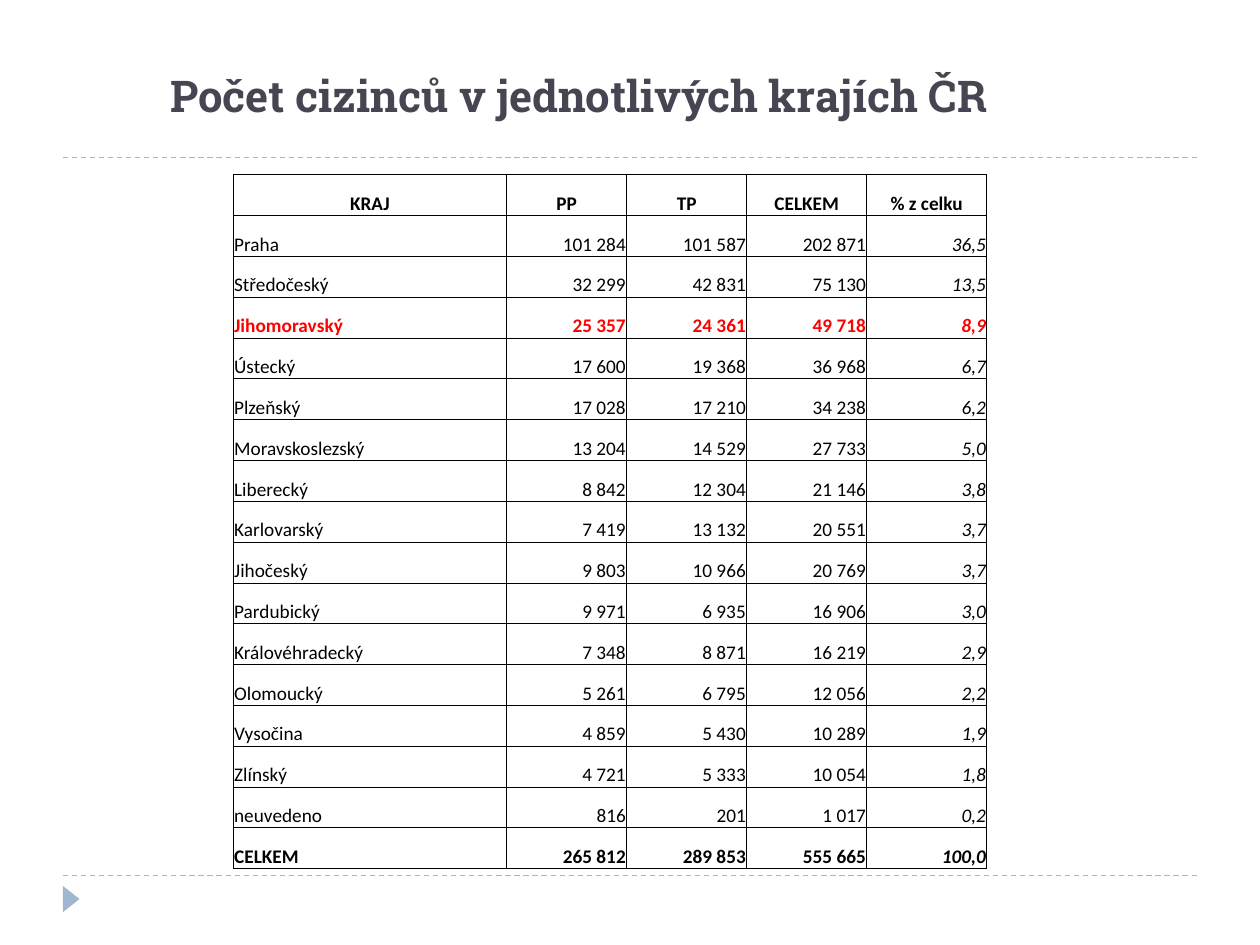
from dataclasses import dataclass

from pptx import Presentation
from pptx.dml.color import RGBColor as RGB
from pptx.enum.dml import MSO_LINE as Dash
from pptx.enum.shapes import MSO_CONNECTOR as Connector, MSO_SHAPE as Shape
from pptx.enum.text import MSO_ANCHOR as Anchor, PP_ALIGN as Align
from pptx.oxml.ns import qn
from pptx.util import Pt
from lxml.etree import SubElement


@dataclass(frozen=True)
class Theme:
    title_font: str = "Roboto Slab"
    body_font: str = "Calibri"
    title_size: float = 25
    body_size: float = 11
    title: str = "464653"
    ink: str = "000000"
    highlight: str = "FF0000"
    accent: str = "9FB8CD"
    border: float = 0.5
    rule: float = 0.75


THEME = Theme()
TITLE = "Počet cizinců v jednotlivých krajích ČR"
HEADINGS = ("KRAJ", "PP", "TP", "CELKEM", "% z celku")
REGIONS = (
    ("Praha", "101 284", "101 587", "202 871", "36,5"),
    ("Středočeský", "32 299", "42 831", "75 130", "13,5"),
    ("Jihomoravský", "25 357", "24 361", "49 718", "8,9"),
    ("Ústecký", "17 600", "19 368", "36 968", "6,7"),
    ("Plzeňský", "17 028", "17 210", "34 238", "6,2"),
    ("Moravskoslezský", "13 204", "14 529", "27 733", "5,0"),
    ("Liberecký", "8 842", "12 304", "21 146", "3,8"),
    ("Karlovarský", "7 419", "13 132", "20 551", "3,7"),
    ("Jihočeský", "9 803", "10 966", "20 769", "3,7"),
    ("Pardubický", "9 971", "6 935", "16 906", "3,0"),
    ("Královéhradecký", "7 348", "8 871", "16 219", "2,9"),
    ("Olomoucký", "5 261", "6 795", "12 056", "2,2"),
    ("Vysočina", "4 859", "5 430", "10 289", "1,9"),
    ("Zlínský", "4 721", "5 333", "10 054", "1,8"),
    ("neuvedeno", "816", "201", "1 017", "0,2"),
)
TOTAL = ("CELKEM", "265 812", "289 853", "555 665", "100,0")
HIGHLIGHTED = "Jihomoravský"


def write(frame, text, *, font=THEME.body_font, size=THEME.body_size,
          color=THEME.ink, bold=False, italic=False, align=Align.LEFT):
    paragraph = frame.paragraphs[0]
    paragraph.alignment = align
    run = paragraph.add_run()
    run.text = text
    run.font.name = font
    run.font.size = Pt(size)
    run.font.bold = bold
    run.font.italic = italic
    run.font.color.rgb = RGB.from_string(color)


def add_title(slide, left, top, width, height):
    title = slide.shapes.title
    title.left, title.top = Pt(left), Pt(top)
    title.width, title.height = Pt(width), Pt(height)
    title.text_frame.vertical_anchor = Anchor.MIDDLE
    title.text_frame.word_wrap = True
    write(title.text_frame, TITLE, font=THEME.title_font, size=THEME.title_size,
          color=THEME.title, bold=True, align=Align.CENTER)


def add_rule(slide, left, top, width):
    """Draw a dashed horizontal line."""
    rule = slide.shapes.add_connector(
        Connector.STRAIGHT, Pt(left), Pt(top), Pt(left + width), Pt(top))
    rule.line.color.rgb = RGB.from_string(THEME.accent)
    rule.line.width = Pt(THEME.rule)
    rule.line.dash_style = Dash.DASH
    SubElement(rule.element.spPr, qn("a:effectLst"))


def add_page_marker(slide, left, top, width, height):
    marker = slide.shapes.add_shape(
        Shape.ISOSCELES_TRIANGLE, Pt(left), Pt(top), Pt(width), Pt(height))
    marker.rotation = 90
    marker.shadow.inherit = False
    marker.fill.solid()
    marker.fill.fore_color.rgb = RGB.from_string(THEME.accent)
    marker.line.fill.background()


def format_cell(cell):
    """Give the cell thin borders, tight margins and no fill."""
    cell.margin_left = cell.margin_right = cell.margin_top = Pt(0.5)
    cell.margin_bottom = 0
    cell.vertical_anchor = Anchor.BOTTOM
    properties = cell._tc.get_or_add_tcPr()
    for side in ("a:lnL", "a:lnR", "a:lnT", "a:lnB"):
        border = SubElement(properties, qn(side), w=str(Pt(THEME.border)))
        SubElement(SubElement(border, qn("a:solidFill")), qn("a:srgbClr"), val=THEME.ink)
    cell.fill.background()


def add_region_table(slide, left, top, width, height):
    rows = (HEADINGS, *REGIONS, TOTAL)
    table = slide.shapes.add_table(
        len(rows), len(HEADINGS), Pt(left), Pt(top), Pt(width), Pt(height)).table
    table.first_row = table.horz_banding = False

    number_width = 68.6
    name_width = width - number_width * (len(HEADINGS) - 1)
    for index, column in enumerate(table.columns):
        column.width = Pt(number_width if index else name_width)

    for row, values in zip(table.rows, rows):
        row.height = Pt(height / len(rows))
        heading = values is HEADINGS
        highlighted = values[0] == HIGHLIGHTED
        for index, (cell, value) in enumerate(zip(row.cells, values)):
            format_cell(cell)
            write(cell.text_frame, value,
                  color=THEME.highlight if highlighted else THEME.ink,
                  bold=heading or highlighted or values is TOTAL,
                  italic=not heading and index == len(values) - 1,
                  align=Align.CENTER if heading else Align.RIGHT if index else Align.LEFT)


def main():
    deck = Presentation()
    deck.slide_width, deck.slide_height = Pt(720), Pt(540)
    slide = deck.slides.add_slide(deck.slide_layouts[5])
    for top in (500.4, 90):
        add_rule(slide, 36, top, 648)
    add_page_marker(slide, 33.2, 509, 15, 9.5)
    add_title(slide, 15, 18, 631.5, 72)
    add_region_table(slide, 133.3, 99.8, 430.6, 396.7)
    deck.save("out.pptx")


if __name__ == "__main__":
    main()
